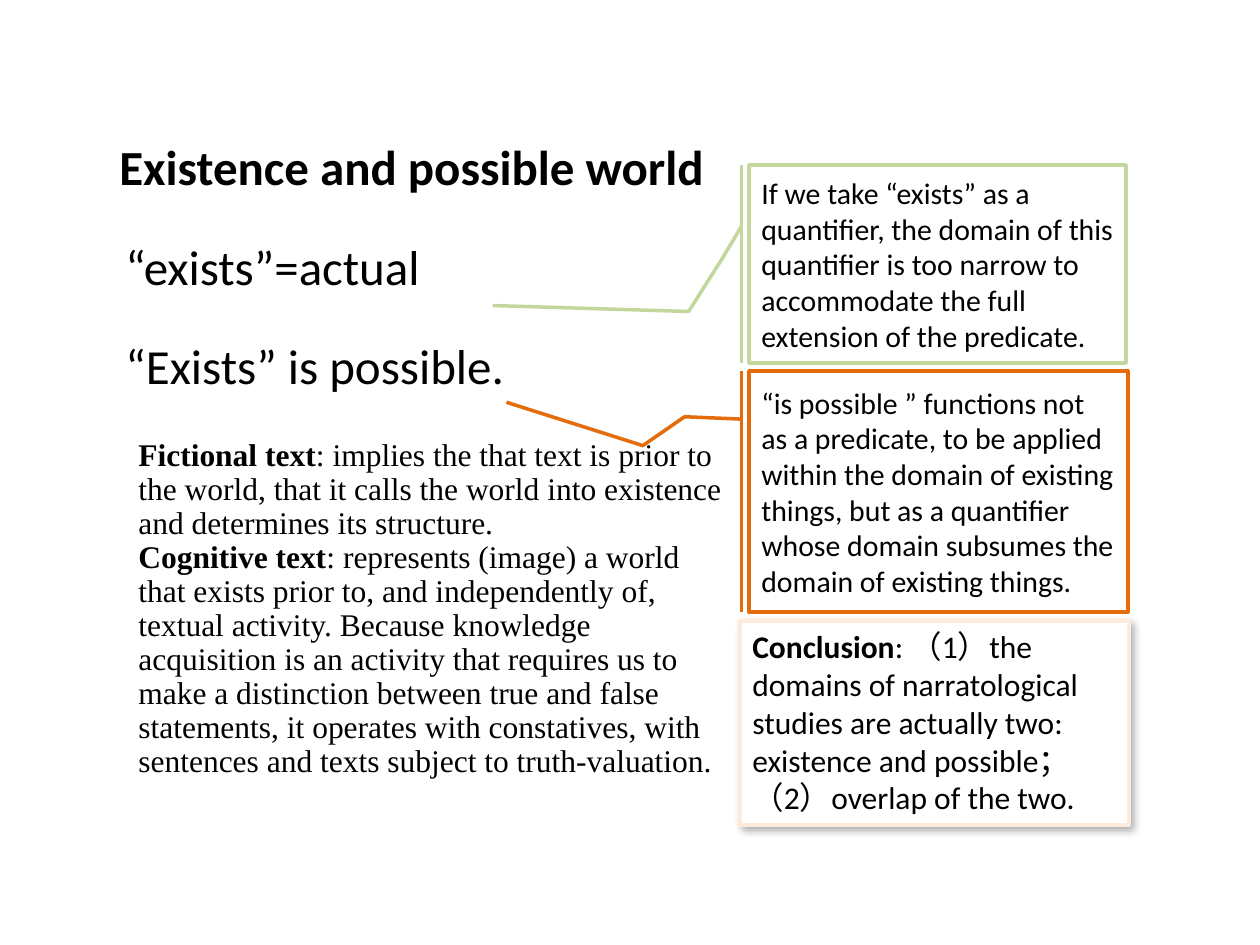
from lxml import etree
from pptx import Presentation
from pptx.dml.color import RGBColor
from pptx.enum.shapes import MSO_SHAPE
from pptx.enum.text import MSO_ANCHOR, MSO_AUTO_SIZE, PP_ALIGN
from pptx.oxml.ns import qn
from pptx.util import Emu, Pt

CALLOUT = MSO_SHAPE.LINE_CALLOUT_3_BORDER_AND_ACCENT_BAR
RECTANGLE = MSO_SHAPE.RECTANGLE
MIDDLE, TOP = MSO_ANCHOR.MIDDLE, MSO_ANCHOR.TOP
GROW, FIXED = MSO_AUTO_SIZE.SHAPE_TO_FIT_TEXT, MSO_AUTO_SIZE.NONE
LEFT = PP_ALIGN.LEFT

THEME = {
    "text": "000000", "paper": "FFFFFF", "shadow": "000000",
    "green": "C3D69B", "orange": "E46C0A", "peach": "FDEADA",
    "sans": "Calibri", "serif": "Times New Roman",
    "heading": 28, "body": 18, "callout": 17, "line": 2,
}
PX = 914400 / 126


def px(*lengths):
    return [Emu(round(length * PX)) for length in lengths]


def write(shape, paragraphs, font, size, spacing=None, **frame_format):
    """Fill a shape with paragraphs, each a list of (text, bold) runs."""
    frame = shape.text_frame
    for name, value in frame_format.items():
        setattr(frame, name, value)
    for index, runs in enumerate(paragraphs):
        paragraph = frame.add_paragraph() if index else frame.paragraphs[0]
        paragraph.alignment = LEFT
        paragraph.line_spacing = spacing
        for text, bold in runs:
            run = paragraph.add_run()
            run.text = text
            run.font.color.rgb = RGBColor.from_string(THEME["text"])
            values = {"name": font, "size": Pt(THEME[size]), "bold": bold}
            for name, value in values.items():
                setattr(run.font, name, value)


presentation = Presentation()
presentation.slide_width, presentation.slide_height = px(1260, 945)
slide = presentation.slides.add_slide(presentation.slide_layouts[6])

# Headings
headings = [
    ((113, 237, 323, 72), "“exists”=actual", False),
    ((107, 137, 616, 72), "Existence and possible world", True),
    ((113, 336, 408, 72), "“Exists” is possible.", False),
]
for box, text, bold in headings:
    shape = slide.shapes.add_textbox(*px(*box))
    write(shape, [[(text, bold)]], THEME["sans"], "heading", 0.9,
          word_wrap=False, auto_size=GROW)

# Callouts and conclusion
panels = [
    (CALLOUT, (749, 165, 377, 198), "green", "callout", MIDDLE, FIXED,
     [0.31, -0.02, 0.47, -0.07, 0.74, -0.16, 0.71, -0.68],
     [("If we take “exists” as a quantifier, the domain of this quantifier is "
       "too narrow to accommodate the full extension of the predicate.", False)]),
    (CALLOUT, (749, 371, 379, 241), "orange", "callout", MIDDLE, FIXED,
     [0.2, -0.02, 0.19, -0.17, 0.31, -0.28, 0.13, -0.64],
     [("“is possible ” functions not as a predicate, to be applied within the "
       "domain of existing things, but as a quantifier whose domain subsumes "
       "the domain of existing things.", False)]),
    (RECTANGLE, (740, 621, 389, 204), "peach", "body", TOP, GROW, [],
     [("Conclusion", True),
      (": （1）the domains of narratological studies are actually two: "
       "existence and possible；（2）overlap of the two.", False)]),
]
for kind, box, color, size, anchor, fit, adjustments, runs in panels:
    shape = slide.shapes.add_shape(kind, *px(*box))
    shape.shadow.inherit = False
    shape.fill.solid()
    shape.fill.fore_color.rgb = RGBColor.from_string(THEME["paper"])
    shape.line.color.rgb = RGBColor.from_string(THEME[color])
    shape.line.width = Pt(THEME["line"])
    for index, value in enumerate(adjustments):
        shape.adjustments[index] = value
    write(shape, [runs], THEME["sans"], size,
          word_wrap=True, auto_size=fit, vertical_anchor=anchor)
conclusion = shape

effects = conclusion.element.spPr.find(qn("a:effectLst"))
shadow = etree.SubElement(
    effects, qn("a:outerShdw"), blurRad=str(Pt(4.5)), dist=str(Pt(2.6)),
    dir=str(53 * 60000), algn="tl", rotWithShape="0")
shadow_color = etree.SubElement(shadow, qn("a:srgbClr"), val=THEME["shadow"])
etree.SubElement(shadow_color, qn("a:alpha"), val="30000")

# Definitions
definitions = [
    ("Fictional text",
     ": implies the that text is prior to the world, that it calls the world "
     "into existence and determines its structure."),
    ("Cognitive text",
     ": represents (image) a world that exists prior to, and independently of, "
     "textual activity. Because knowledge acquisition is an activity that "
     "requires us to make a distinction between true and false statements, it "
     "operates with constatives, with sentences and texts subject to "
     "truth-valuation."),
]
shape = slide.shapes.add_textbox(*px(126, 433, 614, 394))
write(shape, [[(term, True), (meaning, False)] for term, meaning in definitions],
      THEME["serif"], "body", 0.9, word_wrap=True, auto_size=GROW)

presentation.save("out.pptx")
